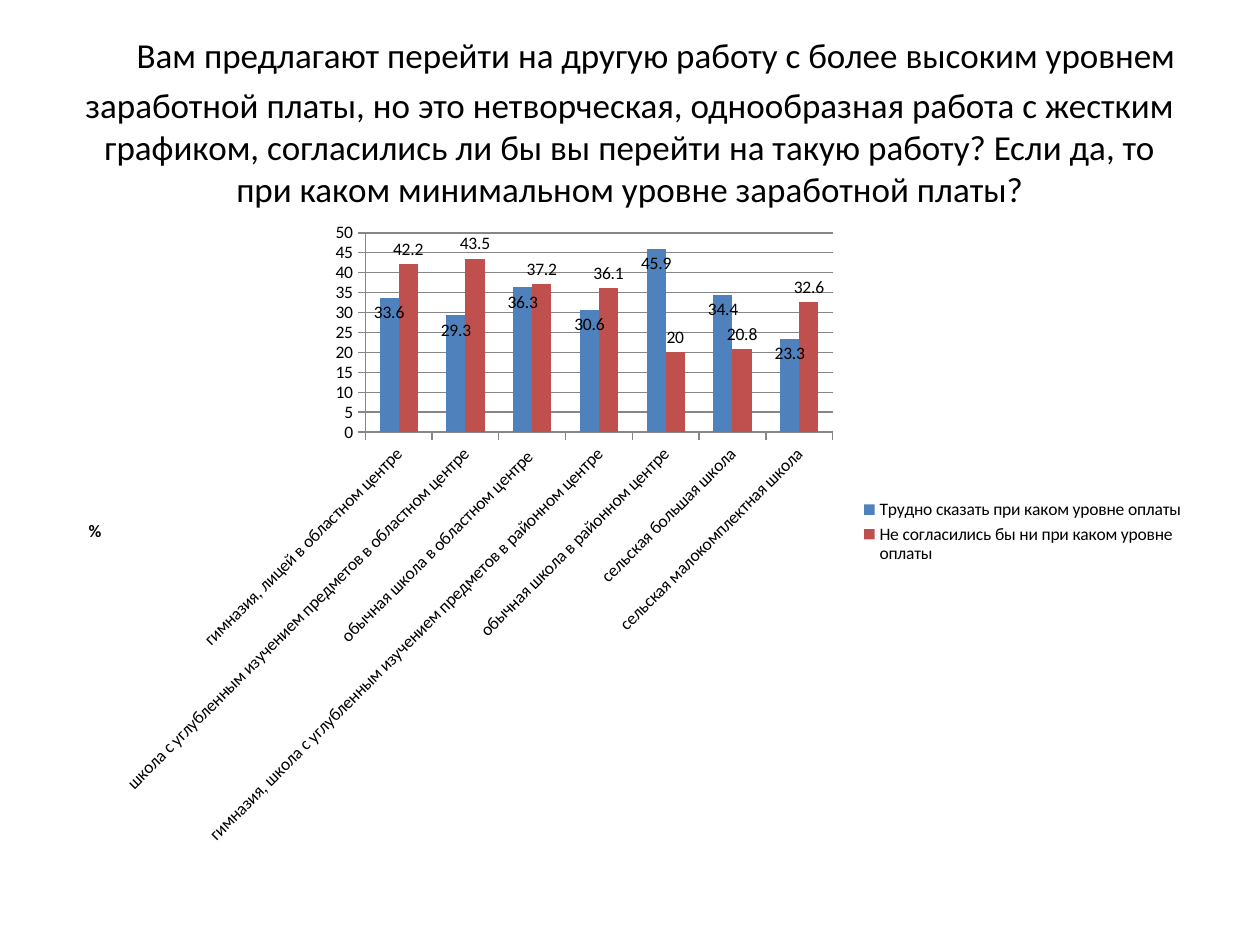
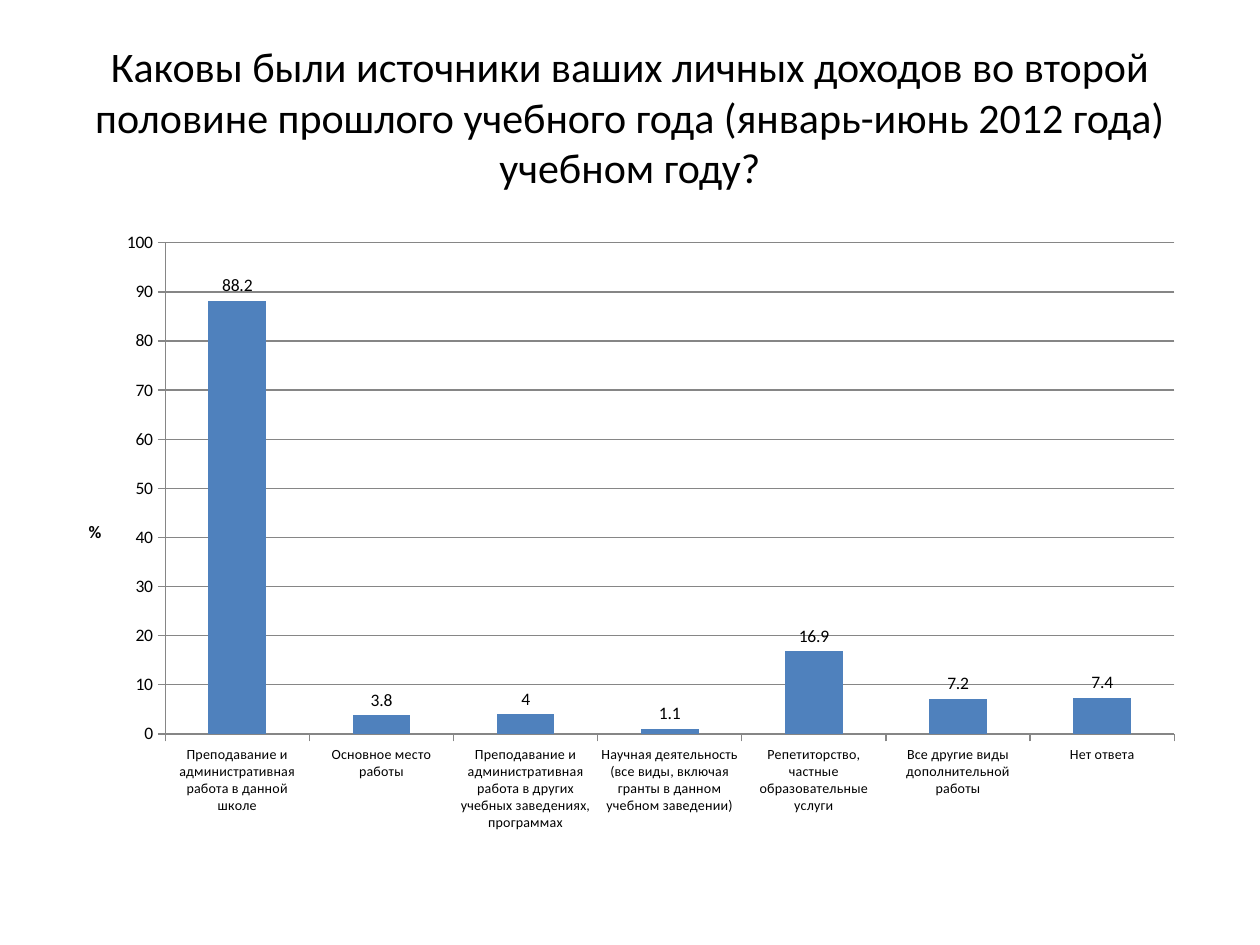
from dataclasses import dataclass

from lxml import etree
from pptx import Presentation
from pptx.chart.data import CategoryChartData
from pptx.dml.color import RGBColor
from pptx.enum.chart import (XL_CHART_TYPE, XL_LABEL_POSITION,
                             XL_LEGEND_POSITION, XL_TICK_MARK)
from pptx.enum.text import MSO_ANCHOR, PP_ALIGN
from pptx.oxml.ns import qn
from pptx.util import Inches, Pt

CLUSTERED = XL_CHART_TYPE.COLUMN_CLUSTERED
INSIDE_END = XL_LABEL_POSITION.INSIDE_END
OUTSIDE_END = XL_LABEL_POSITION.OUTSIDE_END
LEGEND_RIGHT = XL_LEGEND_POSITION.RIGHT
TICK_OUT, TICK_NONE = XL_TICK_MARK.OUTSIDE, XL_TICK_MARK.NONE
CENTER, MIDDLE = PP_ALIGN.CENTER, MSO_ANCHOR.MIDDLE

# Grid of the slide, and the areas (column, row, columns, rows) on it
COLUMNS, ROWS = 20, 150
TITLE_AREA = (1, 6, 18, 25)
CHART_AREA = (1, 35, 18, 99)


@dataclass(frozen=True)
class Theme:
    font: str = "Calibri"
    ink: RGBColor = RGBColor(0, 0, 0)
    rule: RGBColor = RGBColor(0x86, 0x86, 0x86)
    series: tuple = (RGBColor(0x4F, 0x81, 0xBD), RGBColor(0xC0, 0x50, 0x4D))
    title_size: int = 24
    long_title_size: int = 20
    lead_size: int = 44
    chart_size: int = 10
    small_size: int = 8
    rule_width: float = 0.75


def format_font(font, theme, size, bold=False):
    font.name = theme.font
    font.size = Pt(size)
    font.bold = bold
    font.color.rgb = theme.ink


def add_span(para, text, theme, size, bold=False):
    """Add one formatted piece of text to a paragraph."""
    span = para.add_run()
    span.text = text
    format_font(span.font, theme, size, bold)


class SlideBuilder:
    """Holds the theme and the current slide."""

    def __init__(self, deck, theme):
        self.deck, self.theme = deck, theme
        self.page = None

    def new_page(self):
        self.page = self.deck.slides.add_slide(self.deck.slide_layouts[6])

    def place(self, area):
        column, row, columns, rows = area
        unit_x = self.deck.slide_width / COLUMNS
        unit_y = self.deck.slide_height / ROWS
        return [int(length) for length in (column * unit_x, row * unit_y,
                                           columns * unit_x, rows * unit_y)]

    def title(self, text, size, tall_lead=False):
        box = self.page.shapes.add_textbox(*self.place(TITLE_AREA))
        frame = box.text_frame
        frame.word_wrap = True
        frame.vertical_anchor = MIDDLE
        para = frame.paragraphs[0]
        para.alignment = CENTER
        if tall_lead:
            # Indented, taller first line; the text sits above the middle
            frame.margin_bottom = Inches(0.3)
            para._p.get_or_add_pPr().set("indent", str(Inches(0.28)))
            add_span(para, " ", self.theme, self.theme.lead_size)
        add_span(para, text, self.theme, size)

    def column_chart(self, categories, series, label_positions,
                     category_size, legend=False):
        data = CategoryChartData()
        data.categories = categories
        for name, values in series.items():
            data.add_series(name, values)
        chart = self.page.shapes.add_chart(
            CLUSTERED, *self.place(CHART_AREA), data).chart
        format_font(chart.font, self.theme, self.theme.chart_size)
        chart.has_title = False
        self.legend(chart, legend)
        self.axes(chart, category_size)
        self.bars(chart.plots[0], label_positions)

    def legend(self, chart, shown):
        chart.has_legend = shown
        if shown:
            chart.legend.position = LEGEND_RIGHT
            chart.legend.include_in_layout = False

    def rule(self, line):
        line.color.rgb = self.theme.rule
        line.width = Pt(self.theme.rule_width)

    def axes(self, chart, category_size):
        category_axis, value_axis = chart.category_axis, chart.value_axis
        for axis, size in ((category_axis, category_size),
                           (value_axis, self.theme.chart_size)):
            axis.major_tick_mark = TICK_OUT
            axis.minor_tick_mark = TICK_NONE
            self.rule(axis.format.line)
            format_font(axis.tick_labels.font, self.theme, size)
        category_axis.has_major_gridlines = False
        value_axis.has_major_gridlines = True
        self.rule(value_axis.major_gridlines.format.line)

        # Upright unit beside the value axis
        value_axis.has_title = True
        para = value_axis.axis_title.text_frame.paragraphs[0]
        add_span(para, "%", self.theme, self.theme.chart_size, bold=True)
        body = value_axis.axis_title._element.find(".//" + qn("a:bodyPr"))
        body.set("rot", "0")
        body.set("vert", "horz")
        overlay = value_axis.axis_title._element.find(qn("c:overlay"))
        if overlay is None:
            overlay = etree.SubElement(value_axis.axis_title._element,
                                       qn("c:overlay"))
        overlay.set("val", "0")

    def bars(self, plot, label_positions):
        plot.gap_width = 150
        plot.overlap = 0
        plot.vary_by_categories = False
        for bars, color, position in zip(plot.series, self.theme.series,
                                         label_positions):
            bars.format.fill.solid()
            bars.format.fill.fore_color.rgb = color
            bars.invert_if_negative = False
            labels = bars.data_labels
            labels.show_value = True
            labels.position = position
            format_font(labels.font, self.theme, self.theme.chart_size)


def main():
    deck = Presentation()
    deck.slide_width, deck.slide_height = Inches(10), Inches(7.5)
    theme = Theme()
    builder = SlideBuilder(deck, theme)

    # Slide 1: changing to a better paid job, by type of school
    builder.new_page()
    builder.title(
        "Вам предлагают перейти на другую работу с более высоким уровнем "
        "заработной платы, но это нетворческая, однообразная работа с "
        "жестким графиком, согласились ли бы вы перейти на такую работу? "
        "Если да, то при каком минимальном уровне заработной платы?",
        theme.long_title_size, tall_lead=True)
    builder.column_chart(
        ["гимназия, лицей в областном центре",
         "школа с углубленным изучением предметов в областном центре",
         "обычная школа в областном центре ",
         "гимназия, школа с углубленным изучением предметов в районном центре",
         "обычная школа в районном центре",
         "сельская большая школа",
         "сельская малокомплектная школа"],
        {"Трудно сказать при каком уровне оплаты":
            (33.6, 29.3, 36.3, 30.6, 45.9, 34.4, 23.3),
         "Не согласились бы ни при каком уровне оплаты":
            (42.2, 43.5, 37.2, 36.1, 20, 20.8, 32.6)},
        (INSIDE_END, OUTSIDE_END), theme.chart_size, legend=True)

    # Slide 2: sources of personal income
    builder.new_page()
    builder.title(
        "Каковы были источники ваших личных доходов во второй половине "
        "прошлого учебного года (январь-июнь 2012 года) учебном году?",
        theme.title_size)
    builder.column_chart(
        ["Преподавание и административная работа в данной школе",
         "Основное место работы",
         "Преподавание и административная работа в других учебных "
         "заведениях, программах",
         "Научная деятельность (все виды, включая гранты в данном учебном "
         "заведении)",
         "Репетиторство, частные образовательные услуги",
         "Все другие виды дополнительной работы",
         "Нет ответа"],
        {"Series 1": (88.2, 3.8, 4, 1.1, 16.9, 7.2, 7.4)},
        (OUTSIDE_END,), theme.small_size)

    deck.save("out.pptx")


if __name__ == "__main__":
    main()
